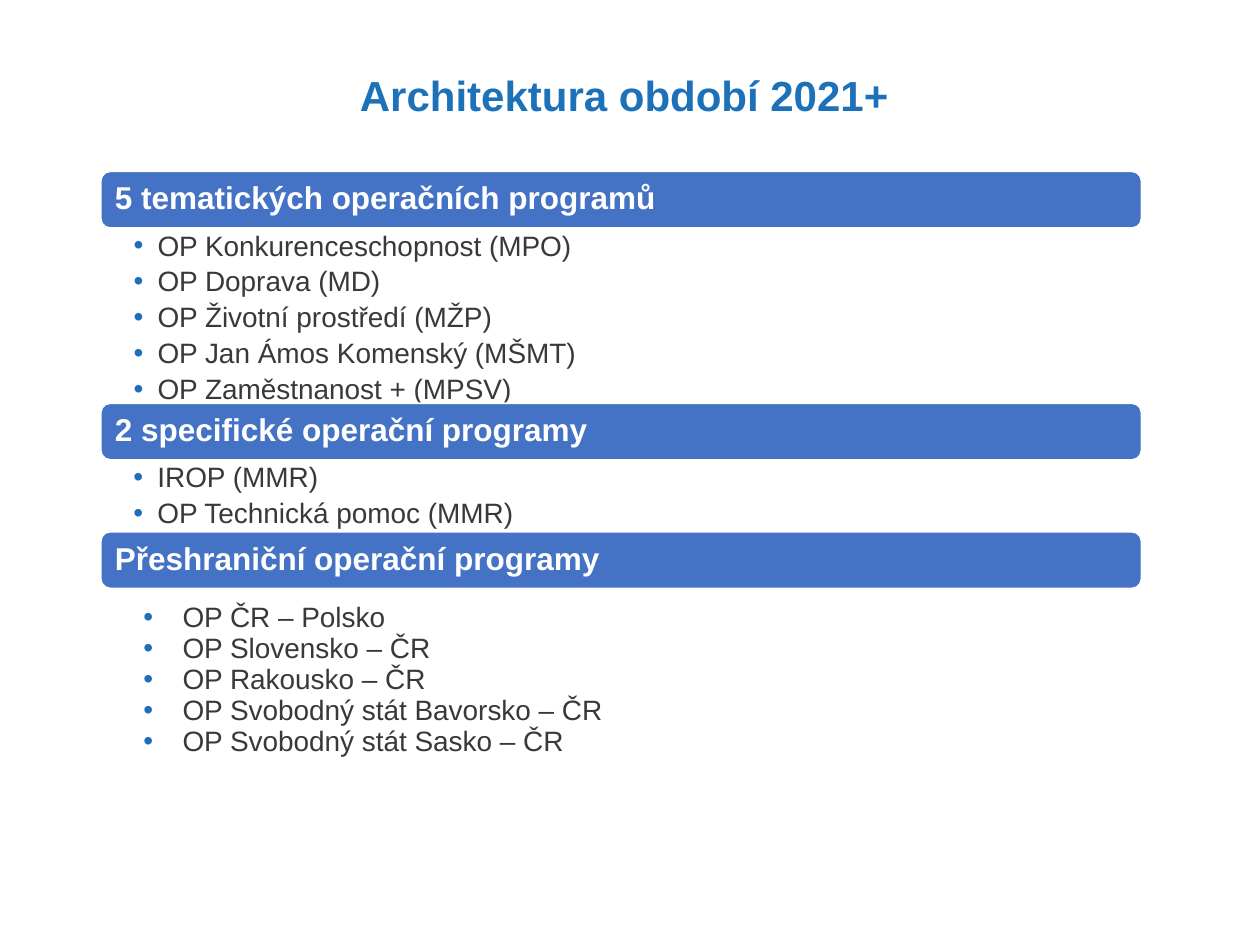
from lxml.etree import SubElement
from pptx import Presentation
from pptx.dml.color import RGBColor
from pptx.enum.shapes import MSO_SHAPE
from pptx.enum.text import MSO_ANCHOR, MSO_AUTO_SIZE, PP_ALIGN
from pptx.oxml.ns import qn
from pptx.util import Pt

PX = 9144  # 100 px to the inch
RGB = RGBColor.from_string


def style(par, size, color, bold=False, align=PP_ALIGN.LEFT, after=0):
    """Format one paragraph and its font."""
    look = {"alignment": align, "line_spacing": 0.9,
            "space_before": Pt(0), "space_after": Pt(after)}
    for key, val in look.items():
        setattr(par, key, val)
    for key, val in {"name": "Arial", "size": Pt(size), "bold": bold}.items():
        setattr(par.font, key, val)
    par.font.color.rgb = RGB(color)


def setup(shape, box, pads, anchor, fit=MSO_AUTO_SIZE.NONE):
    """Place a shape and set its text frame; pads are left, top, right, bottom."""
    for key, val in zip(("left", "top", "width", "height"), box):
        setattr(shape, key, val * PX)
    frame = shape.text_frame
    look = {"word_wrap": True, "auto_size": fit, "vertical_anchor": anchor}
    for side, pad in zip(("left", "top", "right", "bottom"), pads):
        look["margin_" + side] = pad * PX
    for key, val in look.items():
        setattr(frame, key, val)
    return frame


deck = Presentation()
deck.slide_width, deck.slide_height = 1000 * PX, 750 * PX
slide = deck.slides.add_slide(deck.slide_layouts[1])
shapes = slide.shapes

frame = setup(shapes.title, (69, -29, 862, 214), (10, 5, 10, 5), MSO_ANCHOR.MIDDLE)
frame.text = "Architektura období 2021+ "
style(frame.paragraphs[0], 24, "1D71B8", True, PP_ALIGN.CENTER)

tight = {"pads": (26, 2, 12, 2), "fit": MSO_AUTO_SIZE.NONE}
loose = {"pads": (10, 5, 10, 5), "fit": MSO_AUTO_SIZE.SHAPE_TO_FIT_TEXT}

# heading, bar top, list box, list frame, hanging indent, space after, items
groups = [
    ("5 tematických operačních programů", 136, (80, 182, 826, 139), tight, 19, 3.2,
     ["OP Konkurenceschopnost (MPO)", "OP Doprava (MD)",
      "OP Životní prostředí (MŽP)", "OP Jan Ámos Komenský (MŠMT)",
      "OP Zaměstnanost + (MPSV)"]),
    ("2 specifické operační programy", 320, (80, 366, 826, 56), tight, 19, 3.2,
     ["IROP (MMR)", "OP Technická pomoc (MMR)"]),
    ("Přeshraniční operační programy", 422, (104, 474, 802, 131), loose, 31, 0.4,
     ["OP ČR – Polsko", "OP Slovensko – ČR", "OP Rakousko – ČR",
      "OP Svobodný stát Bavorsko – ČR", "OP Svobodný stát Sasko – ČR"]),
]

for num, (head, top, box, form, hang, after, items) in enumerate(groups):
    bar = shapes.add_shape(MSO_SHAPE.ROUNDED_RECTANGLE, 0, 0, PX, PX)
    bar.shadow.inherit = False
    bar.fill.solid()
    bar.fill.fore_color.rgb = RGB("4472C4")
    bar.line.color.rgb = RGB("FFFFFF")
    bar.line.width = Pt(1)
    frame = setup(bar, (80, top, 826, 45), (9, 7, 9, 7), MSO_ANCHOR.MIDDLE)
    frame.text = head
    style(frame.paragraphs[0], 18, "FFFFFF", True)

    # The first list fills the body placeholder
    body = shapes.add_textbox(0, 0, PX, PX) if num else slide.placeholders[1]
    frame = setup(body, box, anchor=MSO_ANCHOR.TOP, **form)
    frame.text = "\n".join(items)
    for par in frame.paragraphs:
        props = par._p.get_or_add_pPr()
        props.set("marL", str(hang * PX))
        props.set("indent", str(-hang * PX))
        tint = SubElement(props, qn("a:buClr"))
        SubElement(tint, qn("a:srgbClr"), val="1D70B8")
        SubElement(props, qn("a:buFont"), typeface="Arial")
        SubElement(props, qn("a:buChar"), char="•")
        style(par, 16, "3B3838", after=after)

deck.save("out.pptx")
